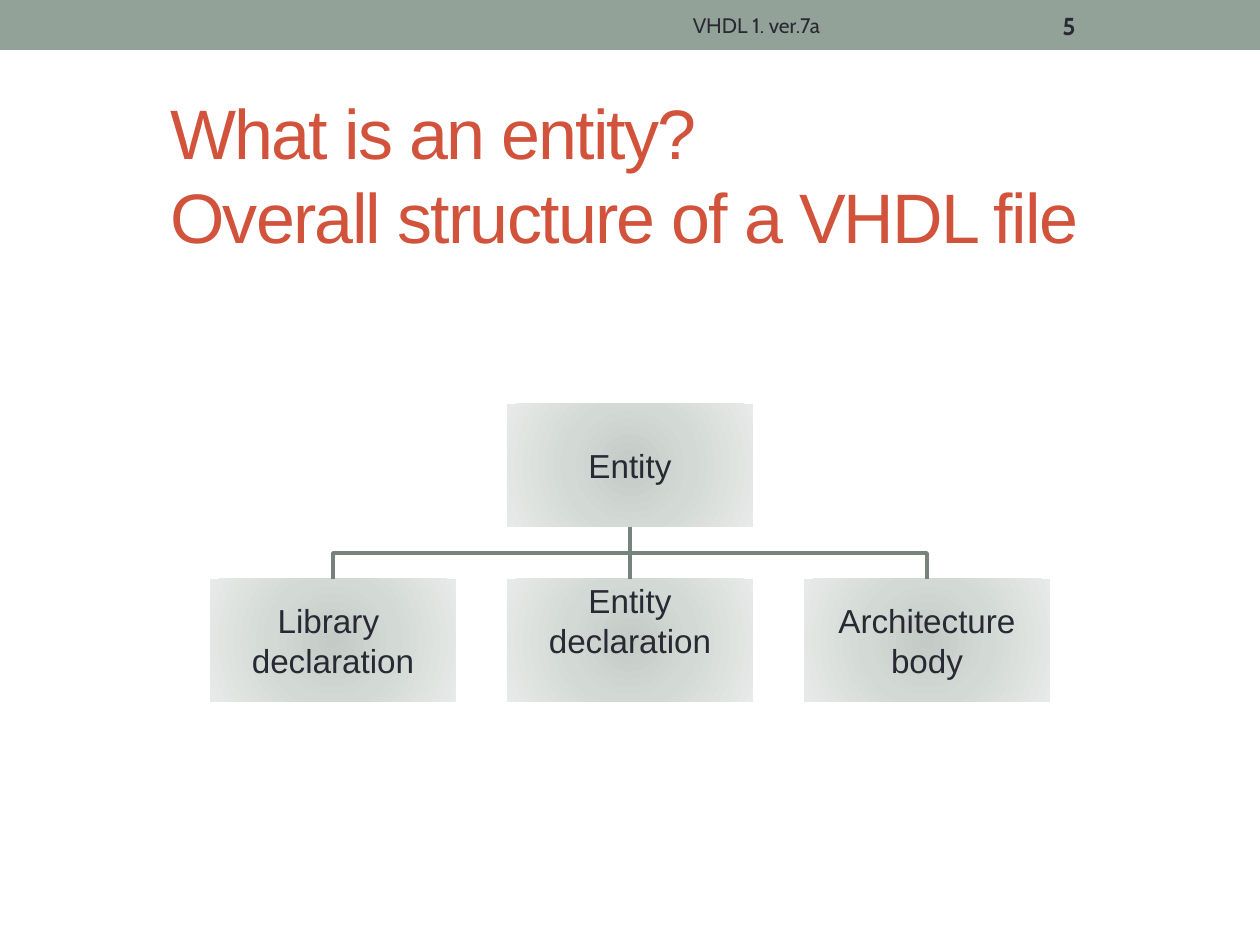
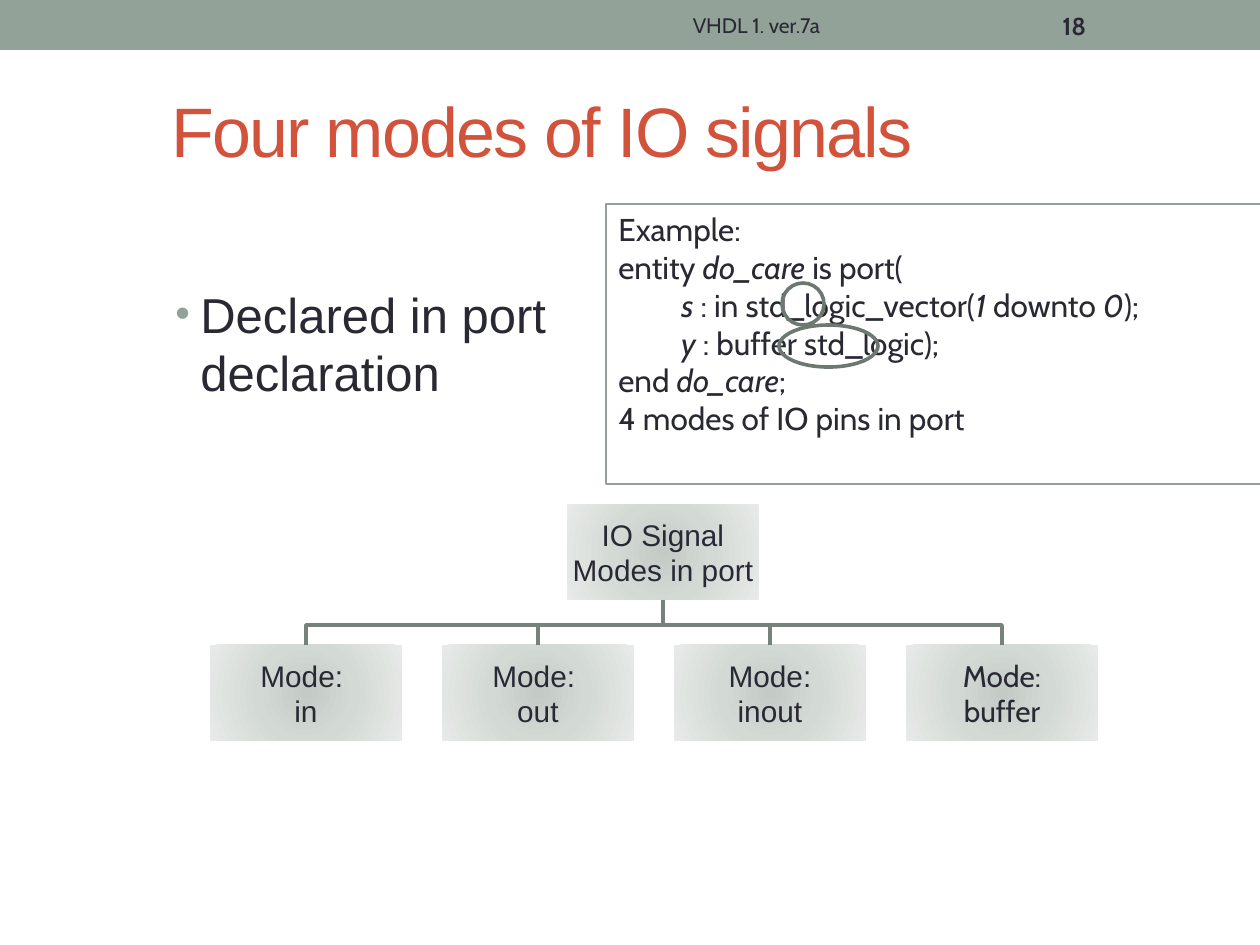
from lxml.etree import SubElement
from pptx import Presentation
from pptx.dml.color import RGBColor
from pptx.enum.shapes import MSO_CONNECTOR, MSO_SHAPE
from pptx.enum.text import MSO_ANCHOR, PP_ALIGN
from pptx.oxml import parse_xml
from pptx.oxml.ns import nsdecls, qn
from pptx.util import Pt

PX = 914400 / 126  # EMU in one px
BAND = RGBColor(0x93, 0xA2, 0x99)
TITLE = RGBColor(0xD2, 0x53, 0x3C)
INK = RGBColor(0x29, 0x29, 0x34)
TREE_LINE = RGBColor(0x76, 0x82, 0x7B)
RING = RGBColor(0x6D, 0x78, 0x71)
NODE_FILL = f"""<a:gradFill {nsdecls("a")} rotWithShape="1"><a:gsLst>
<a:gs pos="0"><a:srgbClr val="C4CAC6"/></a:gs>
<a:gs pos="45000"><a:srgbClr val="D3DAD6"/></a:gs>
<a:gs pos="100000"><a:srgbClr val="E7EAE8"/></a:gs></a:gsLst>
<a:path path="circle"><a:fillToRect l="100000" t="100000" r="100000" b="100000"/></a:path>
</a:gradFill>"""


def add_box(page, kind, left, top, width, height, anchor=MSO_ANCHOR.MIDDLE):
    """Add a plain shape, or a text box when kind is None, measured in px."""
    place = [round(v * PX) for v in (left, top, width, height)]
    if kind is None:
        box = page.shapes.add_textbox(*place)
    else:
        box = page.shapes.add_shape(kind, *place)
        box.shadow.inherit = False
        box.fill.background()
        box.line.fill.background()
    box.text_frame.word_wrap = True
    box.text_frame.vertical_anchor = anchor
    box.text_frame.paragraphs[0].alignment = PP_ALIGN.LEFT
    return box


def add_span(para, text, size, font="Arial", color=INK, bold=False, italic=False):
    span = para.add_run()
    span.text = text
    span.font.size = Pt(size)
    span.font.name = font
    span.font.color.rgb = color
    span.font.bold = bold
    span.font.italic = italic
    return span


deck = Presentation()
deck.slide_width = round(1260 * PX)
deck.slide_height = round(945 * PX)

# Each tree: root and children as (lines, font), boxes on an equal pitch
pages = [
    dict(number="5", title=["What is an entity?", "Overall structure of a VHDL file"],
         title_at=(158, 73), size=19, node=(246, 123), pitch=297,
         root_at=(507, 404), bus=553, child_top=579,
         root=["Entity"],
         children=[(["Library ", "declaration"], "Arial"),
                   (["Entity", "declaration"], "Arial"),
                   (["Architecture", "body"], "Arial")]),
    dict(number="18", title=["Four modes of IO signals"],
         title_at=(159, 29), size=17, node=(192, 96), pitch=232,
         root_at=(567, 504), bus=625, child_top=645,
         root=["IO Signal", "Modes in port"],
         children=[(["Mode: ", "in"], "Arial"), (["Mode: ", "out"], "Arial"),
                   (["Mode:", "inout"], "Arial"), (["Mode:", "buffer"], "Cabin")]),
]

for content in pages:
    page = deck.slides.add_slide(deck.slide_layouts[6])

    # Band with footer and page number
    band = add_box(page, MSO_SHAPE.RECTANGLE, 0, 0, 1260, 50)
    band.fill.solid()
    band.fill.fore_color.rgb = BAND
    footer = add_box(page, None, 473, 3, 567, 45).text_frame.paragraphs[0]
    footer.alignment = PP_ALIGN.CENTER
    add_span(footer, "VHDL 1. ver.7a", 12, "Cabin")
    number = add_box(page, None, 1050, 3, 147, 45).text_frame.paragraphs[0]
    add_span(number, content["number"], 14, "Cabin", bold=True)

    # Title
    para = add_box(page, None, *content["title_at"], 1074, 202).text_frame.paragraphs[0]
    for i, line in enumerate(content["title"]):
        if i:
            para.add_line_break()
        span = add_span(para, line, 40, color=TITLE)
        span.font._element.set("spc", "-100")

    # Tree nodes
    width, height = content["node"]
    root_left, root_top = content["root_at"]
    child_top = content["child_top"]
    places = [(root_left, root_top, content["root"], "Arial")]
    for i, (lines, font) in enumerate(content["children"]):
        places.append((210 + i * content["pitch"], child_top, lines, font))
    nodes = []
    for left, top, lines, font in places:
        node = add_box(page, MSO_SHAPE.RECTANGLE, left, top, width, height)
        properties = node._element.spPr
        properties.replace(properties.find(qn("a:noFill")), parse_xml(NODE_FILL))
        frame = node.text_frame
        frame.margin_left = frame.margin_right = round(PX)
        frame.margin_top = frame.margin_bottom = round(PX)
        if lines == ["Entity", "declaration"]:
            frame.margin_bottom = round(41 * PX)  # this label sits one line higher
        for i, line in enumerate(lines):
            para = frame.add_paragraph() if i else frame.paragraphs[0]
            para.alignment = PP_ALIGN.CENTER
            add_span(para, line, content["size"], font)
        nodes.append(node)

    # Tree branches: straight below the root, elbows elsewhere
    start_x, start_y = root_left + width / 2, root_top + height
    for (left, *_), child in zip(places[1:], nodes[1:]):
        end_x = left + width / 2
        if end_x == start_x:
            branch = page.shapes.add_connector(MSO_CONNECTOR.STRAIGHT, 0, 0, 0, 0)
            branch.begin_connect(nodes[0], 2)
            branch.end_connect(child, 0)
            SubElement(branch._element.spPr, qn("a:effectLst"))
        else:
            outline = page.shapes.build_freeform(start_x, start_y, scale=PX)
            outline.add_line_segments(
                [(start_x, content["bus"]), (end_x, content["bus"]), (end_x, child_top)],
                close=False)
            branch = outline.convert_to_shape()
            branch.shadow.inherit = False
            branch.fill.background()
        branch.line.color.rgb = TREE_LINE
        branch.line.width = Pt(2.08)

# Bullet on the last page
body = add_box(page, None, 163, 278, 525, 567, MSO_ANCHOR.TOP).text_frame.paragraphs[0]
body.space_before = Pt(5.6)
add_span(body, "Declared in port declaration", 28)
body_format = body._p.get_or_add_pPr()
body_format.set("marL", str(round(25 * PX)))
body_format.set("indent", str(round(-25 * PX)))
bullet_color = SubElement(body_format, qn("a:buClr"))
SubElement(bullet_color, qn("a:srgbClr")).set("val", str(BAND))
SubElement(body_format, qn("a:buSzPct")).set("val", "85000")
SubElement(body_format, qn("a:buFont")).set("typeface", "Arial")
SubElement(body_format, qn("a:buChar")).set("char", "•")

# Code example: the spans alternate upright and italic
code_lines = [
    ["Example:"],
    ["entity ", "do_care", " is port("],
    ["\t", "s ", ": in std_logic_vector(", "1", " downto", " 0", ");"],
    ["\t", "y ", ": buffer std_logic);"],
    ["end ", "do_care", ";"],
    ["4 modes of IO pins in port"],
]
code = add_box(page, MSO_SHAPE.RECTANGLE, 606, 204, 655, 280, MSO_ANCHOR.TOP)
code.line.color.rgb = BAND
code.line.width = Pt(0.75)
for i, spans in enumerate(code_lines):
    para = code.text_frame.add_paragraph() if i else code.text_frame.paragraphs[0]
    para.alignment = PP_ALIGN.LEFT
    for j, text in enumerate(spans):
        add_span(para, text, 18, "Cabin", italic=j % 2 == 1)

# Rings around the two port modes
for left, top, width in [(782, 283, 42), (779, 325, 99)]:
    ring = add_box(page, MSO_SHAPE.OVAL, left, top, width, 42)
    ring.line.color.rgb = RING
    ring.line.width = Pt(2.08)

deck.save("out.pptx")
